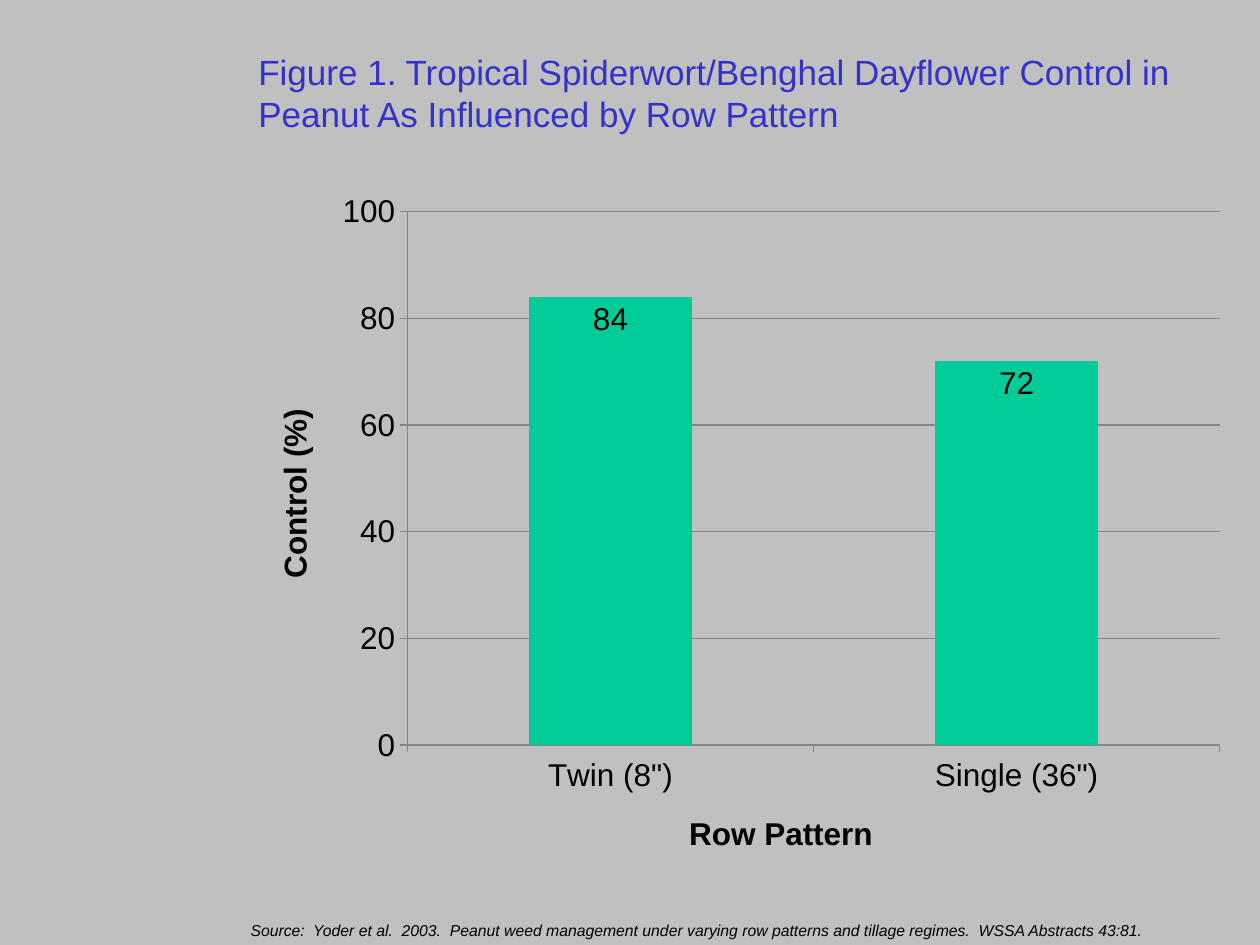
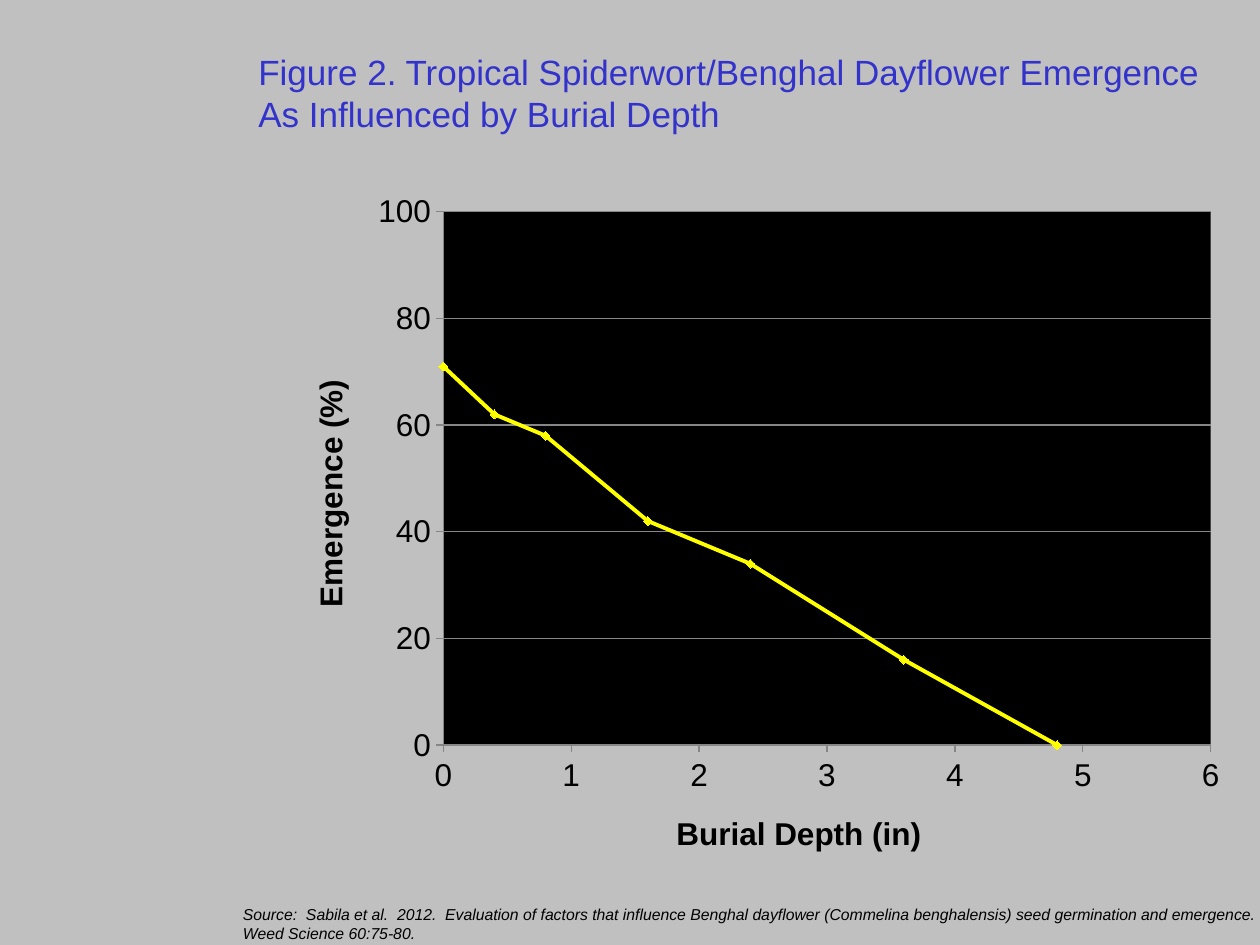
import pptx
import pptx.chart.data
import pptx.dml.color
import pptx.enum.chart
import pptx.enum.text
import pptx.oxml
import pptx.util
from pptx.oxml.ns import nsdecls, qn

Inches = pptx.util.Inches
Pt = pptx.util.Pt
RGBColor = pptx.dml.color.RGBColor
ChartType = pptx.enum.chart.XL_CHART_TYPE

FONT = "Arial"
BACKGROUND = RGBColor(0xC0, 0xC0, 0xC0)
TITLE_BLUE = RGBColor(0x33, 0x33, 0xCC)
BLACK = RGBColor(0, 0, 0)
GRID_GRAY = RGBColor(0x86, 0x86, 0x86)
BAR_GREEN = RGBColor(0x00, 0xCC, 0x99)
LINE_YELLOW = RGBColor(0xFF, 0xFF, 0x00)


def style_font(font, size, color, bold=False, italic=False):
    font.name = FONT
    font.size = Pt(size)
    font.color.rgb = color
    font.bold = bold
    font.italic = italic


def add_figure_slide(presentation, title):
    slide = presentation.slides.add_slide(presentation.slide_layouts.get_by_name("Title Only"))
    shape = slide.shapes.title
    shape.left, shape.top = Inches(1.95), Inches(0.11)
    shape.width, shape.height = Inches(7.97), Inches(1.25)
    frame = shape.text_frame
    frame.text = title
    frame.vertical_anchor = pptx.enum.text.MSO_ANCHOR.MIDDLE
    paragraph = frame.paragraphs[0]
    paragraph.alignment = pptx.enum.text.PP_ALIGN.LEFT
    style_font(paragraph.font, 20, TITLE_BLUE)
    return slide


def add_source(slide, lines, left, top, width, height):
    shape = slide.shapes.add_textbox(Inches(left), Inches(top), Inches(width), Inches(height))
    frame = shape.text_frame
    frame.word_wrap = False
    frame.auto_size = pptx.enum.text.MSO_AUTO_SIZE.SHAPE_TO_FIT_TEXT
    frame.text = "\n".join(lines)
    for paragraph in frame.paragraphs:
        style_font(paragraph.font, 9, BLACK, italic=True)


def style_axis(axis, title):
    axis.axis_title.text_frame.text = title
    style_font(axis.axis_title.text_frame.paragraphs[0].font, 18, BLACK, bold=True)
    axis.major_tick_mark = pptx.enum.chart.XL_TICK_MARK.OUTSIDE
    axis.minor_tick_mark = pptx.enum.chart.XL_TICK_MARK.NONE
    axis.format.line.color.rgb = GRID_GRAY
    axis.format.line.width = Pt(0.75)
    axis.has_major_gridlines = False


def place_plot(chart, left, width):
    plot_area = chart.element.find(".//" + qn("c:plotArea"))
    for layout in plot_area.findall(qn("c:layout")):
        plot_area.remove(layout)
    plot_area.insert(0, pptx.oxml.parse_xml(
        f'<c:layout {nsdecls("c")}><c:manualLayout><c:layoutTarget val="inner"/>'
        '<c:xMode val="edge"/><c:yMode val="edge"/>'
        f'<c:x val="{left}"/><c:y val="0.045"/><c:w val="{width}"/><c:h val="0.76"/>'
        '</c:manualLayout></c:layout>'))


def fill_plot(chart, color):
    plot_area = chart.element.find(".//" + qn("c:plotArea"))
    plot_area.append(pptx.oxml.parse_xml(
        f'<c:spPr {nsdecls("c", "a")}><a:solidFill><a:srgbClr val="{color}"/></a:solidFill></c:spPr>'))


def add_percent_chart(slide, chart_type, data, category_title, value_title):
    chart = slide.shapes.add_chart(
        chart_type, Inches(1.95), Inches(1.43), Inches(7.88), Inches(5.57), data).chart
    style_font(chart.font, 18, BLACK)
    chart.has_title = False
    chart.has_legend = False
    chart.plots[0].vary_by_categories = False
    style_axis(chart.category_axis, category_title)
    value_axis = chart.value_axis
    style_axis(value_axis, value_title)
    value_axis.minimum_scale = 0
    value_axis.maximum_scale = 100
    value_axis.major_unit = 20
    value_axis.major_gridlines.format.line.color.rgb = GRID_GRAY
    value_axis.major_gridlines.format.line.width = Pt(0.75)
    return chart


def add_row_pattern_chart(slide):
    data = pptx.chart.data.CategoryChartData()
    data.categories = ['Twin (8")', 'Single (36")']
    data.add_series("Series 1", [84, 72])
    chart = add_percent_chart(
        slide, ChartType.COLUMN_CLUSTERED, data, "Row Pattern", "Control (%)")
    place_plot(chart, 0.163, 0.818)
    plot = chart.plots[0]
    plot.gap_width = 150
    fill = plot.series[0].format.fill
    fill.solid()
    fill.fore_color.rgb = BAR_GREEN
    plot.has_data_labels = True
    labels = plot.data_labels
    labels.show_value = True
    labels.position = pptx.enum.chart.XL_LABEL_POSITION.INSIDE_END
    style_font(labels.font, 18, BLACK)


def add_burial_depth_chart(slide):
    data = pptx.chart.data.XyChartData()
    emergence = data.add_series("Series 1")
    for depth, percent in [(0, 71), (0.4, 62), (0.8, 58), (1.6, 42),
                           (2.4, 34), (3.6, 16), (4.8, 0)]:
        emergence.add_data_point(depth, percent)
    chart = add_percent_chart(
        slide, ChartType.XY_SCATTER_LINES, data, "Burial Depth (in)", "Emergence (%)")
    chart.category_axis.minimum_scale = 0
    chart.category_axis.maximum_scale = 6
    chart.category_axis.major_unit = 1
    place_plot(chart, 0.199, 0.773)
    fill_plot(chart, BLACK)
    series = chart.plots[0].series[0]
    series.smooth = False
    series.format.line.color.rgb = LINE_YELLOW
    series.format.line.width = Pt(2.25)
    marker = series.marker
    marker.style = pptx.enum.chart.XL_MARKER_STYLE.DIAMOND
    marker.size = 5
    marker.format.fill.solid()
    marker.format.fill.fore_color.rgb = LINE_YELLOW
    marker.format.line.color.rgb = LINE_YELLOW


def main():
    presentation = pptx.Presentation()
    presentation.slide_width = Inches(10)
    presentation.slide_height = Inches(7.5)
    background = presentation.slide_master.background.fill
    background.solid()
    background.fore_color.rgb = BACKGROUND

    slide = add_figure_slide(
        presentation,
        "Figure 1. Tropical Spiderwort/Benghal Dayflower Control in Peanut "
        "As Influenced by Row Pattern")
    add_row_pattern_chart(slide)
    add_source(slide, [
        "Source:  Yoder et al.  2003.  Peanut weed management under varying row patterns "
        "and tillage regimes.  WSSA Abstracts 43:81."], 1.89, 7.26, 7.36, 0.25)

    slide = add_figure_slide(
        presentation,
        "Figure 2. Tropical Spiderwort/Benghal Dayflower Emergence "
        "As Influenced by Burial Depth")
    add_burial_depth_chart(slide)
    add_source(slide, [
        "Source:  Sabila et al.  2012.  Evaluation of factors that influence Benghal dayflower "
        "(Commelina benghalensis) seed germination and emergence.",
        "Weed Science 60:75-80."], 1.83, 7.13, 8.31, 0.4)

    presentation.save("out.pptx")


if __name__ == "__main__":
    main()
